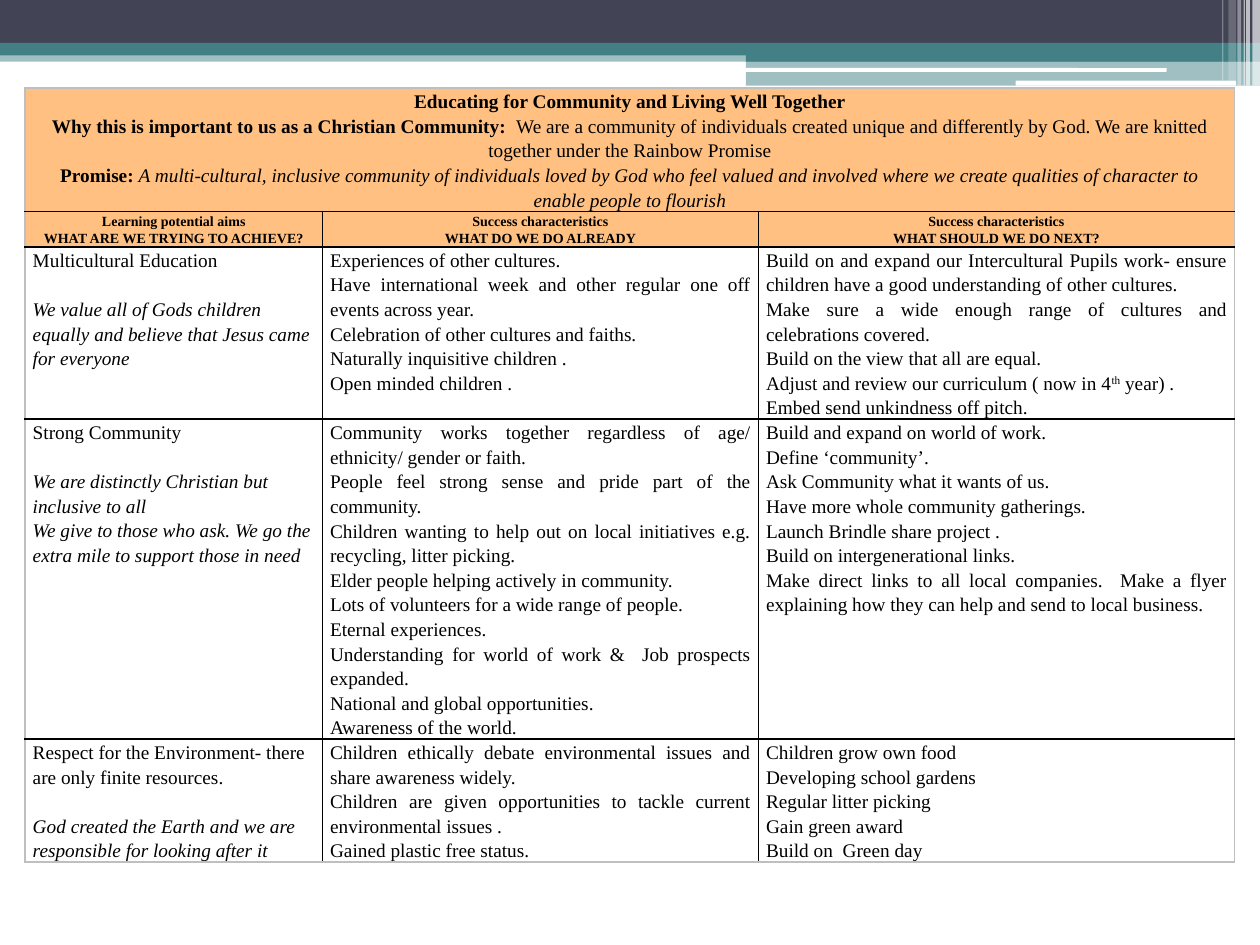
from lxml import etree
from pptx import Presentation
from pptx.dml.color import RGBColor
from pptx.enum import shapes, text
from pptx.oxml.ns import qn
from pptx.util import Inches, Pt

THEME = {
    "font": "Times New Roman", "body": 11, "heading": 8,
    "ink": "000000", "navy": "424456", "teal": "438086", "white": "FFFFFF",
    "header": "FFC081", "frame": "BFBFBF",
    "leading": 1.15, "gap": 14, "border": 1, "inset": 0.06,
}

# Top band: left, top, width, height, colour, opacity in percent
BANDS = [
    (0, 0.4, 10, 0.09, "teal", 50),
    (0, 0, 10, 0.34, "navy", 100),
    (0, 0.34, 10, 0.1, "teal", 100),
    (5.92, 0.39, 4.08, 0.1, "teal", 100),
    (5.92, 0.48, 4.08, 0.2, "teal", 50),
]
PILLS = [(5.91, 0.54, 3.35, 0.03), (8.06, 0.64, 1.75, 0.04)]
# White stripes at the right: left, width, height, opacity
STRIPES = [
    (9.94, 0.06, 0.68, 65), (9.89, 0.03, 0.68, 65), (9.87, 0.01, 0.68, 60),
    (9.82, 0.03, 0.68, 40), (9.75, 0.06, 0.64, 20), (9.7, 0.01, 0.64, 30),
]

# Paragraphs are lists of (wording, style): b bold, i italic, s superscript
INTRO = [
    [("Educating for Community and Living Well Together", "b")],
    [("Why this is important to us as a Christian Community:  ", "b"),
     ("We are a community of individuals created unique and differently by God. "
      "We are knitted together under the Rainbow Promise", "")],
    [("Promise: ", "b"),
     ("A multi-cultural, inclusive community of individuals loved by God who feel "
      "valued and involved where we create qualities of character to enable people "
      "to flourish", "i")],
]
HEADINGS = [
    ("Learning potential aims", "WHAT ARE WE TRYING TO ACHIEVE?"),
    ("Success characteristics", "WHAT DO WE DO ALREADY"),
    ("Success characteristics", "WHAT SHOULD WE DO NEXT?"),
]
# Each aim: name, values behind it, what is done already, what comes next
AIMS = [
    ("Multicultural Education",
     ["We value all of Gods children equally and believe that Jesus came for everyone"],
     ["Experiences of other cultures.",
      "Have international week and other regular one off events across year.",
      "Celebration of other cultures and faiths.",
      "Naturally inquisitive children .",
      "Open minded children ."],
     ["Build on and expand our Intercultural Pupils work- ensure children have a good "
      "understanding of other cultures.",
      "Make sure a wide enough range of cultures and celebrations covered.",
      "Build on the view that all are equal.",
      [("Adjust and review our curriculum ( now in 4", ""), ("th", "s"), (" year) .", "")],
      "Embed send unkindness off pitch."]),
    ("Strong Community",
     ["We are distinctly Christian but inclusive to all",
      "We give to those who ask. We go the extra mile to support those in need"],
     ["Community works together regardless of age/ ethnicity/ gender or faith.",
      "People feel strong sense and pride part of the community.",
      "Children wanting to help out on local initiatives e.g. recycling, litter picking.",
      "Elder people helping actively in community.",
      "Lots of volunteers for a wide range of people.",
      "Eternal experiences.",
      "Understanding for world of work &  Job prospects expanded.",
      "National and global opportunities.",
      "Awareness of the world."],
     ["Build and expand on world of work.",
      "Define ‘community’.",
      "Ask Community what it wants of us.",
      "Have more whole community gatherings.",
      "Launch Brindle share project .",
      "Build on intergenerational links.",
      "Make direct links to all local companies.  Make a flyer explaining how they can "
      "help and send to local business."]),
    ("Respect for the Environment- there are only finite resources.",
     ["God created the Earth and we are responsible for looking after it"],
     ["Children ethically debate environmental issues and share awareness widely.",
      "Children are given opportunities to tackle current environmental issues .",
      "Gained plastic free status."],
     ["Children grow own food",
      "Developing school gardens",
      "Regular litter picking",
      "Gain green award",
      "Build on  Green day"]),
]
COLUMNS = [2.36, 3.46, 3.78]
ROWS = [0.97, 0.28, 1.36, 2.53, 0.97]
LEFT, TOP = 0.2, 0.7


def colour(name):
    return RGBColor.from_string(THEME[name])


def add_block(page, kind, place, fill, opacity=100):
    block = page.shapes.add_shape(kind, *map(Inches, place))
    block.shadow.inherit = False
    block.line.fill.background()
    block.fill.solid()
    block.fill.fore_color.rgb = colour(fill)
    if opacity < 100:
        tint = block.fill._xPr.find(qn("a:solidFill"))[0]
        etree.SubElement(tint, qn("a:alpha"), val=str(opacity * 1000))


def set_borders(cell, edges):
    """Put a line on each side; edges holds a colour name per side L, R, T, B."""
    properties = cell._tc.get_or_add_tcPr()
    for index, (side, name) in enumerate(edges.items()):
        line = etree.Element(qn("a:ln" + side), w=str(Pt(THEME["border"])))
        fill = etree.SubElement(line, qn("a:solidFill"))
        etree.SubElement(fill, qn("a:srgbClr"), val=THEME[name])
        properties.insert(index, line)


def write(cell, paragraphs, align, size="body", gap_at=None):
    frame = cell.text_frame
    for index, spans in enumerate(paragraphs):
        para = frame.paragraphs[0] if index == 0 else frame.add_paragraph()
        para.alignment = align
        para.line_spacing = THEME["leading"]
        if index == gap_at:
            para.space_before = Pt(THEME["gap"])
        for wording, style in [(spans, "")] if isinstance(spans, str) else spans:
            span = para.add_run()
            span.text = wording
            span.font.name = THEME["font"]
            span.font.size = Pt(THEME[size])
            span.font.color.rgb = colour("ink")
            span.font.bold = "b" in style
            span.font.italic = "i" in style
            if "s" in style:
                span.font._element.set("baseline", "30000")


def add_decoration(page):
    kinds = shapes.MSO_SHAPE
    for *place, fill, opacity in BANDS:
        add_block(page, kinds.RECTANGLE, place, fill, opacity)
    for place in PILLS:
        add_block(page, kinds.ROUNDED_RECTANGLE, place, "white")
    for left, width, height, opacity in STRIPES:
        add_block(page, kinds.RECTANGLE, (left, 0, width, height), "white", opacity)


def add_plan(page):
    table = page.shapes.add_table(
        len(ROWS), len(COLUMNS), Inches(LEFT), Inches(TOP),
        Inches(sum(COLUMNS)), Inches(sum(ROWS))).table
    table.first_row = table.horz_banding = False
    for column, width in zip(table.columns, COLUMNS):
        column.width = Inches(width)
    for row, height in zip(table.rows, ROWS):
        row.height = Inches(height)

    # Fills, margins and borders: grey outside, black inside
    last_row, last_column = len(ROWS) - 1, len(COLUMNS) - 1
    for r in range(len(ROWS)):
        for c in range(len(COLUMNS)):
            cell = table.cell(r, c)
            cell.margin_left = cell.margin_right = Inches(THEME["inset"])
            cell.margin_top = cell.margin_bottom = 0
            cell.fill.solid()
            cell.fill.fore_color.rgb = colour("header" if r < 2 else "white")
            outer = {"L": c == 0, "R": c == last_column or r == 0,
                     "T": r == 0, "B": r == last_row}
            set_borders(cell, {side: "frame" if edge else "ink"
                               for side, edge in outer.items()})
    table.cell(0, 0).merge(table.cell(0, last_column))

    # Wording
    align = text.PP_ALIGN
    write(table.cell(0, 0), INTRO, align.CENTER)
    for c, lines in enumerate(HEADINGS):
        write(table.cell(1, c), [[(line, "b")] for line in lines], align.CENTER, "heading")
    for r, (aim, values, already, following) in enumerate(AIMS, start=2):
        write(table.cell(r, 0), [aim] + [[(value, "i")] for value in values],
              align.LEFT, gap_at=1)
        write(table.cell(r, 1), already, align.JUSTIFY)
        write(table.cell(r, 2), following, align.JUSTIFY)


def main():
    deck = Presentation()
    deck.slide_width, deck.slide_height = Inches(10), Inches(7.5)
    page = deck.slides.add_slide(deck.slide_layouts[6])
    add_decoration(page)
    add_plan(page)
    deck.save("out.pptx")


if __name__ == "__main__":
    main()
